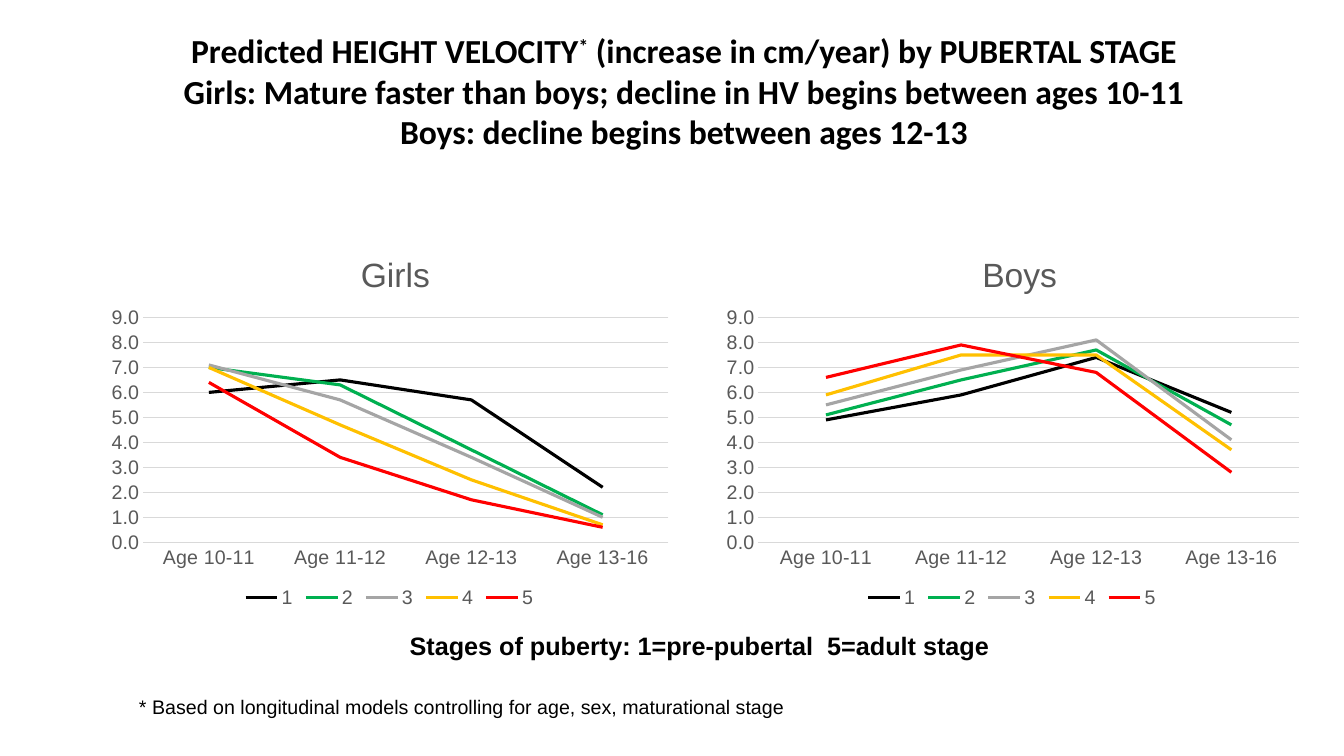
import pptx
import pptx.chart.data
import pptx.dml.color
import pptx.enum.chart
import pptx.enum.text
import pptx.oxml
import pptx.oxml.ns
import pptx.util

COLORS = {
    "text": "000000", "axis": "595959", "grid": "D9D9D9",
    "1": "000000", "2": "00B050", "3": "A5A5A5", "4": "FFC000", "5": "FF0000",
}
COLORS = {name: pptx.dml.color.RGBColor.from_string(value) for name, value in COLORS.items()}
CENTER = pptx.enum.text.PP_ALIGN.CENTER
LEFT = pptx.enum.text.PP_ALIGN.LEFT

presentation = pptx.Presentation()
presentation.slide_width = pptx.util.Inches(13.33)
presentation.slide_height = pptx.util.Inches(7.5)
slide = presentation.slides.add_slide(presentation.slide_layouts[6])
column = presentation.slide_width / 200
row = presentation.slide_height / 150


def style_font(font, size, color, name="Arial", bold=False):
    font.size = pptx.util.Pt(size)
    font.color.rgb = COLORS[color]
    font.name = name
    font.bold = bold


def set_layout(parent, position, **shares):
    for old_layout in parent.findall(pptx.oxml.ns.qn("c:layout")):
        parent.remove(old_layout)
    target = '<c:layoutTarget val="inner"/>' if "w" in shares else ""
    modes = "".join(f'<c:{axis}Mode val="edge"/>' for axis in "xy")
    values = "".join(f'<c:{key} val="{share}"/>' for key, share in shares.items())
    parent.insert(position, pptx.oxml.parse_xml(
        f'<c:layout {pptx.oxml.ns.nsdecls("c")}><c:manualLayout>'
        f"{target}{modes}{values}</c:manualLayout></c:layout>"))


text_boxes = [
    ((1.8, 5, 200, 25), 24, "Calibri", True, CENTER, [
        ["Predicted HEIGHT VELOCITY", "*", " (increase in cm/year) by PUBERTAL STAGE"],
        ["Girls: Mature faster than boys; decline in HV begins between ages 10-11"],
        ["Boys: decline begins between ages 12-13"],
    ]),
    ((16.95, 124, 174.3, 8), 18, "Arial", True, CENTER,
     [["Stages of puberty: 1=pre-pubertal  5=adult stage"]]),
    ((19.2, 136.8, 174.3, 6.8), 14, "Arial", False, LEFT,
     [["* Based on longitudinal models controlling for age, sex, maturational stage"]]),
]
for (left, top, width, height), size, font_name, bold, alignment, lines in text_boxes:
    shape = slide.shapes.add_textbox(
        int(left * column), int(top * row), int(width * column), int(height * row))
    frame = shape.text_frame
    frame.word_wrap = True
    for index, line in enumerate(lines):
        paragraph = frame.add_paragraph() if index else frame.paragraphs[0]
        paragraph.alignment = alignment
        for text in line:
            run = paragraph.add_run()
            run.text = text
            style_font(run.font, size, "text", font_name, bold)
            if text == "*":
                run.font._element.set("baseline", "30000")

ages = ["Age 10-11", "Age 11-12", "Age 12-13", "Age 13-16"]
height_charts = [
    ("Girls", 14.85, 86.25, [
        (6.0, 6.5, 5.7, 2.2),
        (7.0, 6.3, 3.7, 1.1),
        (7.1, 5.7, 3.4, 1.0),
        (7.0, 4.7, 2.5, 0.7),
        (6.4, 3.4, 1.7, 0.6),
    ]),
    ("Boys", 106.2, 88.8, [
        (4.9, 5.9, 7.4, 5.2),
        (5.1, 6.5, 7.7, 4.7),
        (5.5, 6.9, 8.1, 4.1),
        (5.9, 7.5, 7.5, 3.7),
        (6.6, 7.9, 6.8, 2.8),
    ]),
]
for group, left, width, velocities in height_charts:
    chart_data = pptx.chart.data.CategoryChartData(number_format="0.0")
    chart_data.categories = ages
    for stage, values in enumerate(velocities, start=1):
        chart_data.add_series(str(stage), values)
    chart = slide.shapes.add_chart(
        pptx.enum.chart.XL_CHART_TYPE.LINE, int(left * column), int(45.2 * row),
        int(width * column), int(76.4 * row), chart_data).chart
    style_font(chart.font, 10, "text")

    chart.has_title = True
    title_run = chart.chart_title.text_frame.paragraphs[0].add_run()
    title_run.text = group
    style_font(title_run.font, 24, "axis")
    chart.chart_title.include_in_layout = False
    set_layout(chart.chart_title._element, 1, x=0.44, y=0.05)
    set_layout(chart._chartSpace.chart.plotArea, 0, x=0.075, y=0.233, w=0.906, h=0.584)

    chart.has_legend = True
    chart.legend.position = pptx.enum.chart.XL_LEGEND_POSITION.BOTTOM
    chart.legend.include_in_layout = False
    style_font(chart.legend.font, 14, "axis")

    for axis in (chart.category_axis, chart.value_axis):
        axis.major_tick_mark = pptx.enum.chart.XL_TICK_MARK.NONE
        axis.minor_tick_mark = pptx.enum.chart.XL_TICK_MARK.NONE
        style_font(axis.tick_labels.font, 14, "axis")
    chart.value_axis.minimum_scale = 0
    chart.value_axis.maximum_scale = 9
    chart.value_axis.major_unit = 1
    chart.value_axis.tick_labels.number_format = "0.0"
    chart.value_axis.tick_labels.number_format_is_linked = False
    chart.value_axis.format.line.fill.background()
    chart.value_axis.has_major_gridlines = True
    for line in (chart.category_axis.format.line, chart.value_axis.major_gridlines.format.line):
        line.color.rgb = COLORS["grid"]
        line.width = pptx.util.Pt(0.75)

    chart.plots[0].vary_by_categories = False
    for series in chart.plots[0].series:
        series.smooth = False
        series.marker.style = pptx.enum.chart.XL_MARKER_STYLE.NONE
        series.format.line.color.rgb = COLORS[series.name]
        series.format.line.width = pptx.util.Pt(2.25)

presentation.save("out.pptx")
